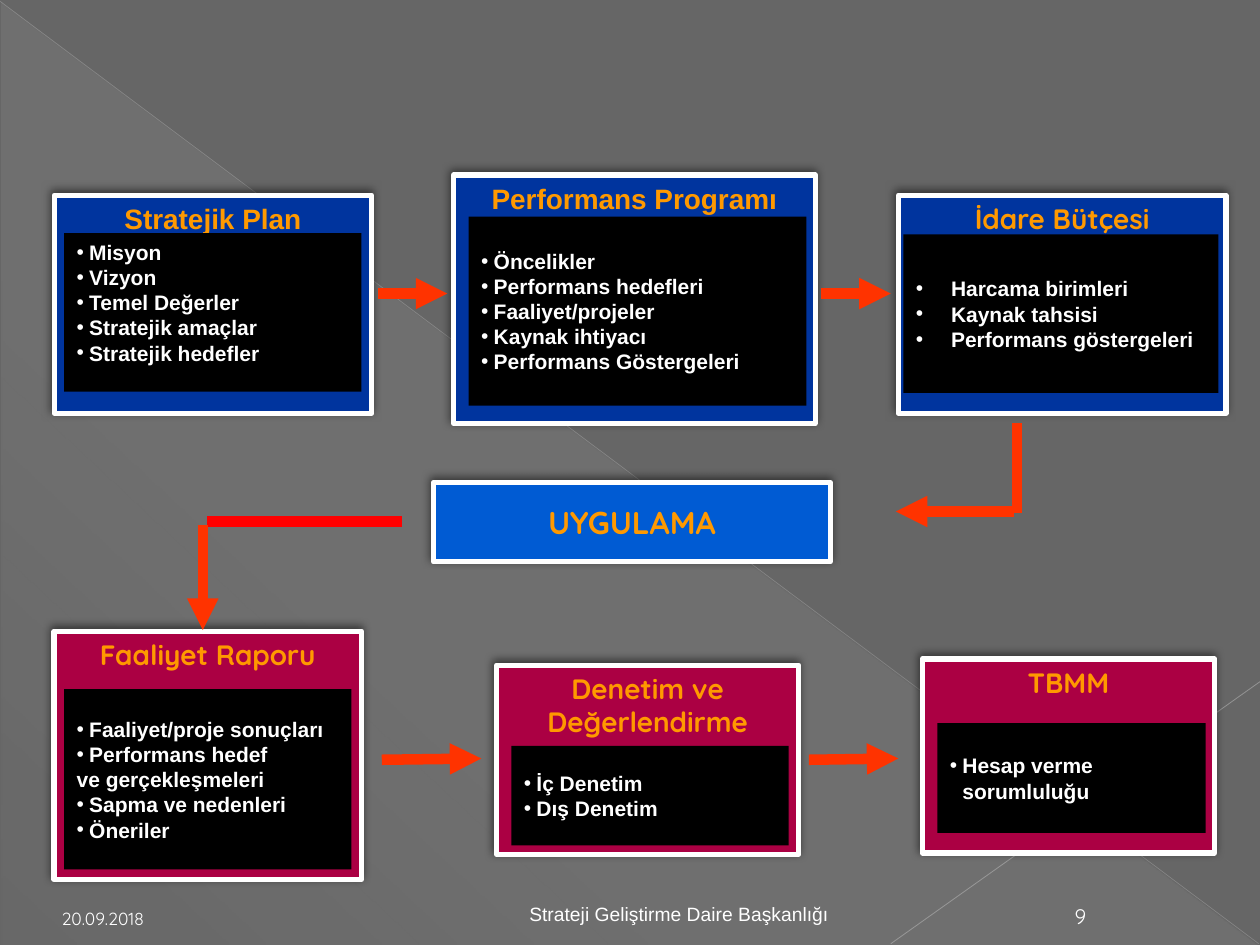
from lxml import etree
from pptx import Presentation
from pptx.dml.color import RGBColor
from pptx.enum.shapes import MSO_CONNECTOR, MSO_SHAPE
from pptx.enum.text import MSO_ANCHOR, PP_ALIGN
from pptx.oxml.ns import qn
from pptx.util import Pt

PX = 9144
RECT, RIGHT_TRIANGLE = MSO_SHAPE.RECTANGLE, MSO_SHAPE.RIGHT_TRIANGLE
STRAIGHT = MSO_CONNECTOR.STRAIGHT
TOP, MIDDLE, BOTTOM = MSO_ANCHOR.TOP, MSO_ANCHOR.MIDDLE, MSO_ANCHOR.BOTTOM
LEFT, CENTER = PP_ALIGN.LEFT, PP_ALIGN.CENTER

ARIAL, QUICKSAND = "Arial", "Quicksand"
NAVY, BLUE, CRIMSON = "00349E", "005BD3", "AB0043"
BLACK, WHITE, ORANGE = "000000", "FFFFFF", "FF9900"
GREY, ARROW, RED = "666666", "FF3300", "FF0000"


def rgb(value):
    return RGBColor.from_string(value)


def emu(*lengths):
    return [length * PX for length in lengths]


def add(parent, tag, **attributes):
    return etree.SubElement(parent, qn(tag), {k: str(v) for k, v in attributes.items()})


def add_color(parent, color, opacity):
    add(add(parent, "a:srgbClr", val=color), "a:alpha", val=opacity * 1000)


class FlowSlide:
    def __init__(self, presentation):
        self.slide = presentation.slides.add_slide(presentation.slide_layouts[6])
        self.shapes = self.slide.shapes
        background = self.slide.background.fill
        background.solid()
        background.fore_color.rgb = rgb(GREY)

    def set_text(self, frame, lines, size, color, font, bold=True, align=CENTER,
                 anchor=TOP, hang=0):
        frame.word_wrap = True
        frame.vertical_anchor = anchor
        for index, line in enumerate(lines):
            paragraph = frame.paragraphs[0] if index == 0 else frame.add_paragraph()
            paragraph.text = line.removeprefix("• ")
            paragraph.alignment = align
            if line.startswith("• "):
                properties = paragraph._p.get_or_add_pPr()
                properties.set("marL", str(hang * PX))
                properties.set("indent", str(-hang * PX))
                add(properties, "a:buFont", typeface=ARIAL)
                add(properties, "a:buChar", char="•")
            paragraph.font.size = Pt(size)
            paragraph.font.bold = bold
            paragraph.font.name = font
            paragraph.font.color.rgb = rgb(color)

    def box(self, bounds, fill, framed=False):
        box = self.shapes.add_shape(RECT, *emu(*bounds))
        box.fill.solid()
        box.fill.fore_color.rgb = rgb(fill)
        box.shadow.inherit = False
        if framed:
            box.line.color.rgb = rgb(WHITE)
            box.line.width = Pt(3)
            effects = box.element.spPr.find(qn("a:effectLst"))
            shadow = add(effects, "a:outerShdw", blurRad=Pt(5), dist=Pt(2),
                         dir=245 * 60000, rotWithShape=0)
            add_color(shadow, BLACK, 50)
        else:
            box.line.fill.background()
        return box.text_frame

    def card(self, bounds, fill, title, font, panel, items, anchor=MIDDLE, hang=10):
        self.set_text(self.box(bounds, fill, True), title, 16, ORANGE, font)
        self.set_text(self.box(panel, BLACK), items, 12, WHITE, ARIAL,
                      align=LEFT, anchor=anchor, hang=hang)

    def banner(self, bounds, text):
        self.set_text(self.box(bounds, BLUE, True), [text], 18, ORANGE, QUICKSAND,
                      anchor=MIDDLE)

    def line(self, ends, color=ARROW, width=6, arrow=False, opacity=100):
        line = self.shapes.add_connector(STRAIGHT, *emu(*ends))
        line.line.color.rgb = rgb(color)
        line.line.width = Pt(width)
        properties = line.element.spPr
        outline = properties.find(qn("a:ln"))
        if opacity < 100:
            add(outline.find(".//" + qn("a:srgbClr")), "a:alpha", val=opacity * 1000)
        if arrow:
            add(outline, "a:tailEnd", type="triangle")
        add(properties, "a:effectLst")

    def sheen(self, bounds):
        sheen = self.shapes.add_shape(RIGHT_TRIANGLE, *emu(*bounds))
        sheen.shadow.inherit = False
        sheen.line.fill.background()
        gradient = etree.Element(qn("a:gradFill"))
        stops = add(gradient, "a:gsLst")
        for position, opacity in ((0, 10), (70, 8), (100, 1)):
            add_color(add(stops, "a:gs", pos=position * 1000), "D2D2D2", opacity)
        add(gradient, "a:lin", ang=133 * 60000, scaled=0)
        sheen.element.spPr.find(qn("a:prstGeom")).addnext(gradient)

    def caption(self, bounds, text, size, font, align=CENTER, anchor=BOTTOM):
        frame = self.shapes.add_textbox(*emu(*bounds)).text_frame
        self.set_text(frame, [text], size, WHITE, font, False, align, anchor)


def main():
    presentation = Presentation()
    presentation.slide_width, presentation.slide_height = emu(1000, 750)
    flow = FlowSlide(presentation)

    flow.sheen((1, 2, 998, 748))
    flow.line((0, 1, 999, 749), "BFBFBF", 0.39, opacity=35)
    flow.line((1000, 541, 707, 749), "C6C6C6", 0.47, opacity=45)

    flow.card((43, 155, 252, 173), NAVY, ["Stratejik Plan"], ARIAL,
              (51, 185, 236, 126),
              ["• Misyon", "• Vizyon", "• Temel Değerler", "• Stratejik amaçlar",
               "• Stratejik hedefler"], anchor=TOP)
    flow.card((360, 139, 287, 197), NAVY, ["Performans Programı"], ARIAL,
              (372, 172, 268, 150),
              ["• Öncelikler", "• Performans hedefleri", "• Faaliyet/projeler",
               "• Kaynak ihtiyacı", "• Performans Göstergeleri"])
    flow.card((713, 155, 260, 173), NAVY, ["İdare Bütçesi"], QUICKSAND,
              (717, 186, 250, 126),
              ["• Harcama birimleri", "• Kaynak tahsisi", "• Performans göstergeleri"],
              hang=28)
    flow.banner((344, 383, 315, 63), "UYGULAMA")
    flow.card((43, 501, 244, 197), CRIMSON, ["Faaliyet Raporu"], QUICKSAND,
              (51, 547, 228, 143),
              ["• Faaliyet/proje sonuçları", "• Performans hedef", "ve gerçekleşmeleri",
               "• Sapma ve nedenleri", "• Öneriler"])
    flow.card((394, 528, 240, 150), CRIMSON, ["Denetim ve", "Değerlendirme"], QUICKSAND,
              (406, 592, 220, 79), ["• İç Denetim", "• Dış Denetim"])
    flow.card((732, 523, 232, 154), CRIMSON, ["TBMM"], QUICKSAND,
              (744, 574, 213, 87), ["• Hesap verme\vsorumluluğu"])

    flow.line((807, 336, 807, 407))
    flow.line((319, 414, 164, 414), RED)
    for ends in ((300, 233, 355, 233), (652, 233, 707, 233), (805, 406, 711, 406),
                 (161, 417, 161, 500), (303, 603, 382, 602), (642, 603, 713, 602)):
        flow.line(ends, arrow=True)

    flow.caption((320, 711, 438, 29), "Strateji Geliştirme Daire Başkanlığı", 11, ARIAL,
                 anchor=TOP)
    flow.caption((39, 709, 233, 33), "20.09.2018", 10, QUICKSAND, align=LEFT)
    flow.caption((830, 709, 55, 33), "9", 12, QUICKSAND)
    presentation.save("out.pptx")


if __name__ == "__main__":
    main()
